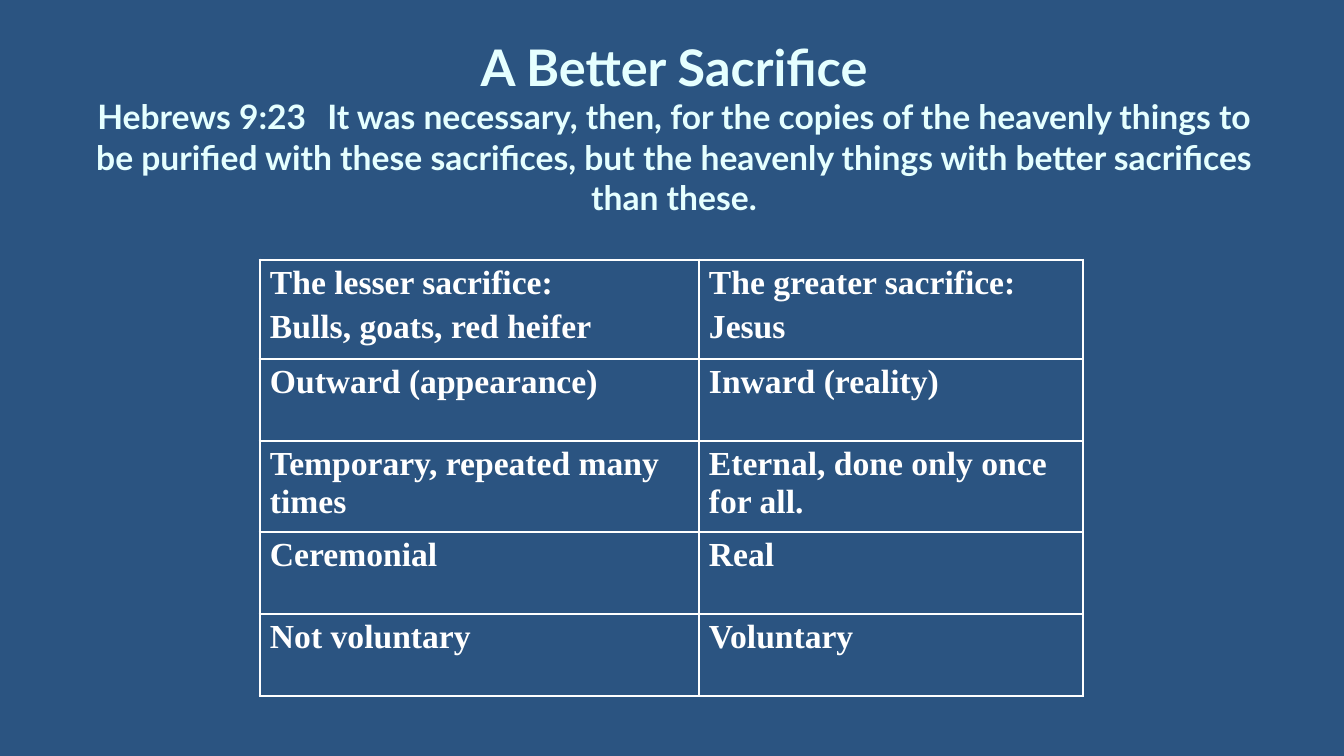
from lxml import etree
from pptx import Presentation
from pptx import util as u
from pptx.dml.color import RGBColor
from pptx.enum import text
from pptx.oxml.ns import qn

PX = 914400 / 100.8


def px(length):
    return u.Emu(round(length * PX))


def color(value):
    return RGBColor.from_string(value)


class SlideBuilder:
    background, title_color, table_color = "2B5481", "E5FFFF", "FFFFFF"
    title_font, table_font = "Lato", "Times New Roman"
    inner_line, outer_line = 1, 2.25

    def __init__(self, presentation):
        self.slide = presentation.slides.add_slide(presentation.slide_layouts[6])
        fill = self.slide.background.fill
        fill.solid()
        fill.fore_color.rgb = color(self.background)

    def add_run(self, paragraph, words, font, size, hue, spacing=0):
        run = paragraph.add_run()
        run.text = words
        run.font.name, run.font.size, run.font.bold = font, u.Pt(size), True
        run.font.color.rgb = color(hue)
        if spacing:
            run._r.get_or_add_rPr().set("spc", str(spacing))

    def add_title(self, box, heading, reference, verse):
        frame = self.slide.shapes.add_textbox(*map(px, box)).text_frame
        frame.word_wrap = True
        frame.vertical_anchor = text.MSO_ANCHOR.MIDDLE
        paragraph = frame.paragraphs[0]
        paragraph.alignment = text.PP_ALIGN.CENTER
        self.add_run(paragraph, heading, self.title_font, 36, self.title_color)
        paragraph.add_line_break()
        # One widened space parts the reference from the verse
        for words, spacing in ((reference, 0), (" ", 930), (verse, 0)):
            self.add_run(paragraph, words, self.title_font, 24, self.title_color, spacing)

    def add_borders(self, cell, outer_sides):
        properties = cell._tc.get_or_add_tcPr()
        for position, side in enumerate("LRTB"):
            width = self.outer_line if side in outer_sides else self.inner_line
            line = etree.Element(qn(f"a:ln{side}"), w=str(u.Pt(width)))
            fill = etree.SubElement(line, qn("a:solidFill"))
            etree.SubElement(fill, qn("a:srgbClr"), val=self.table_color)
            properties.insert(position, line)

    def fill_cell(self, cell, lines, outer_sides):
        cell.fill.background()
        cell.margin_left = cell.margin_right = px(10)
        cell.margin_top = cell.margin_bottom = px(5)
        frame = cell.text_frame
        for index, words in enumerate(lines):
            paragraph = frame.add_paragraph() if index else frame.paragraphs[0]
            if index:
                paragraph.space_before = u.Pt(4.8)
            self.add_run(paragraph, words, self.table_font, 24, self.table_color)
        self.add_borders(cell, outer_sides)

    def add_table(self, left, top, widths, heights, rows):
        table = self.slide.shapes.add_table(
            len(rows), len(widths), px(left), px(top),
            px(sum(widths)), px(sum(heights))).table
        table.first_row = table.horz_banding = False
        for column, width in zip(table.columns, widths):
            column.width = px(width)
        for row, height in zip(table.rows, heights):
            row.height = px(height)
        for i, row in enumerate(rows):
            for j, lines in enumerate(row):
                outer = {"L": j == 0, "R": j == len(widths) - 1,
                         "T": i == 0, "B": i == len(rows) - 1}
                self.fill_cell(table.cell(i, j), lines,
                               [side for side in outer if outer[side]])


def main():
    presentation = Presentation()
    presentation.slide_width, presentation.slide_height = px(1344), px(756)
    builder = SlideBuilder(presentation)

    # Heading and verse
    builder.add_title(
        (71, 30, 1206, 193), "A Better Sacrifice", "Hebrews 9:23",
        "It was necessary, then, for the copies of the heavenly things to be "
        "purified with these sacrifices, but the heavenly things with better "
        "sacrifices than these.")

    # Comparison of the two sacrifices
    builder.add_table(260, 260, (439, 384), (99, 82, 91, 82, 82), [
        (["The lesser sacrifice:", "Bulls, goats, red heifer"],
         ["The greater sacrifice:", "Jesus"]),
        (["Outward (appearance)"], ["Inward (reality)"]),
        (["Temporary, repeated many times"], ["Eternal, done only once for all."]),
        (["Ceremonial"], ["Real"]),
        (["Not voluntary"], ["Voluntary"]),
    ])
    presentation.save("out.pptx")


if __name__ == "__main__":
    main()
